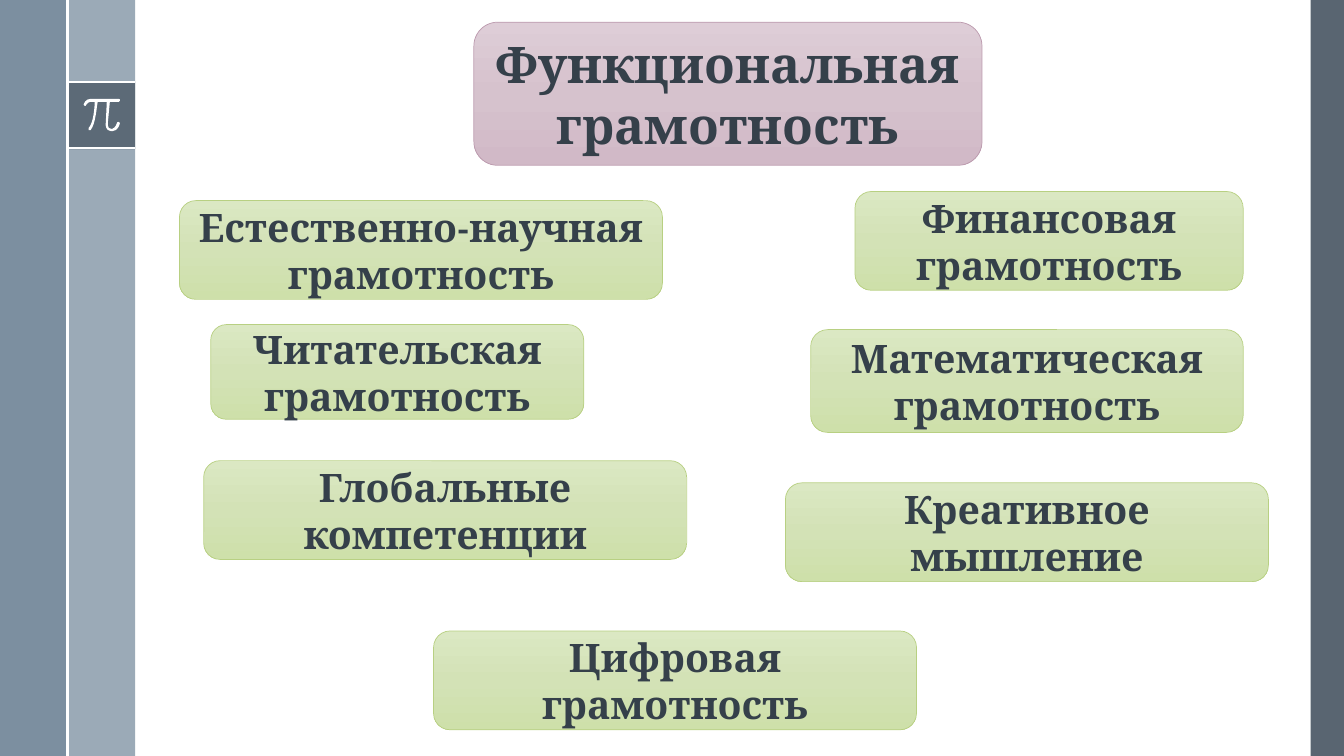
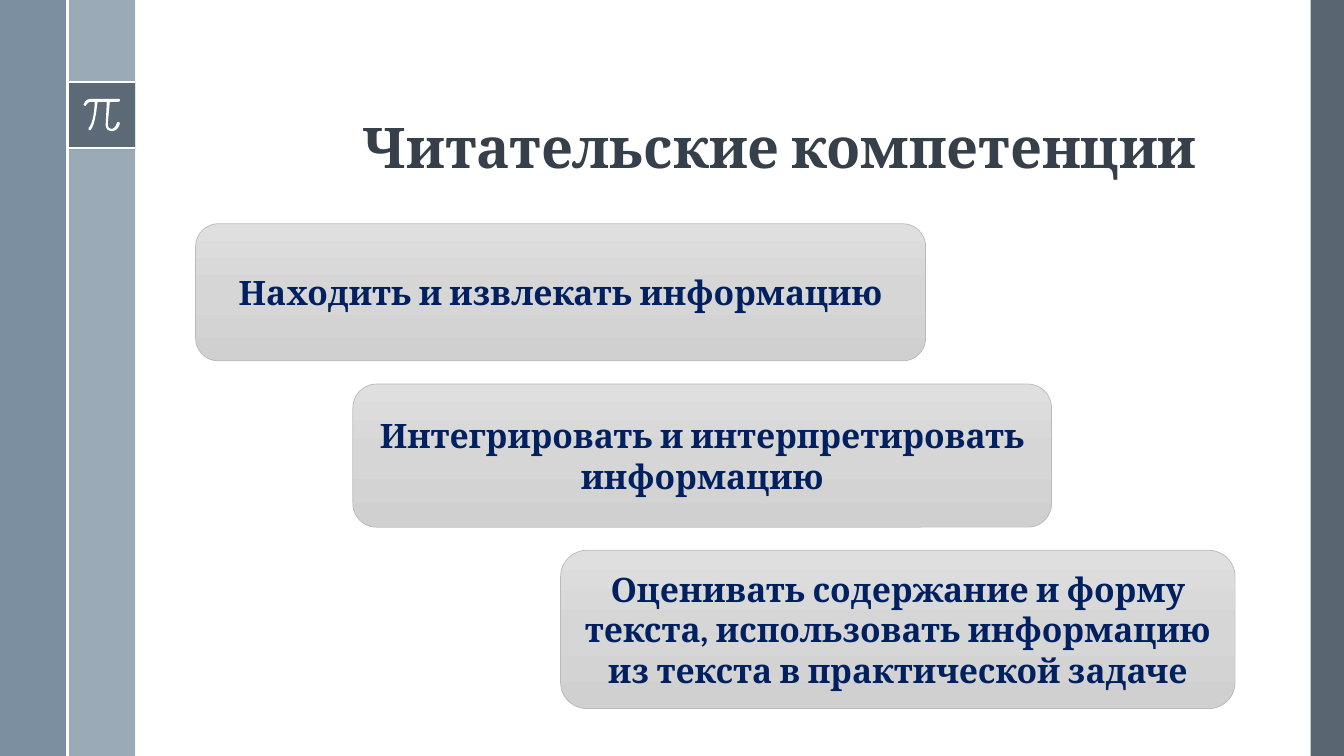
from copy import deepcopy

from lxml.etree import SubElement
from pptx import Presentation
from pptx.dml.color import RGBColor
from pptx.enum.shapes import MSO_CONNECTOR as Connector, MSO_SHAPE as Shape
from pptx.enum.text import MSO_ANCHOR as Anchor, PP_ALIGN as Align
from pptx.oxml.ns import qn
from pptx.util import Inches, Pt

WIDTH, HEIGHT = 13.33, 7.5
BAND = 0.67  # width of each left band

FONT = "Cambria"
INK, NAVY, WHITE = "35404A", "002060", "FFFFFF"
SLATE, STEEL, MIST = "475562", "6A8093", "9BAAB7"

# Card styles: three gradient colours from top to bottom, then the outline
MAUVE = (("DECDD7", "D6C2CD", "D1B9C7"), "BC9AAE")
GREEN = (("DBE8C3", "D3E2B6", "CEE0AA"), "B8D082")
GREY = (("DFDFDF", "D6D6D6", "D0D0D0"), "BABABA")

# Outline of the pi sign in inches: one point is a line, three points a curve
PI_START = (1.18, 0.98)
PI_OUTLINE = [
    [(0.9, 0.98)],
    [(0.85, 0.98), (0.83, 1.03), (0.83, 1.04)],
    [(0.83, 1.04), (0.83, 1.05), (0.84, 1.05)],
    [(0.85, 1.05)],
    [(0.85, 1.05), (0.87, 1.01), (0.9, 1.01)],
    [(0.94, 1.01)],
    [(0.94, 1.05), (0.93, 1.22), (0.88, 1.27)],
    [(0.87, 1.28), (0.87, 1.28), (0.88, 1.29)],
    [(0.9, 1.29)],
    [(0.95, 1.23), (0.96, 1.05), (0.97, 1.01)],
    [(1.06, 1.01)],
    [(1.05, 1.22)],
    [(1.05, 1.22), (1.04, 1.26), (1.07, 1.29)],
    [(1.08, 1.3), (1.09, 1.3), (1.1, 1.3)],
    [(1.12, 1.3)],
    [(1.17, 1.3), (1.19, 1.23), (1.19, 1.22)],
    [(1.19, 1.22), (1.18, 1.21), (1.18, 1.21)],
    [(1.17, 1.21), (1.16, 1.21), (1.16, 1.22)],
    [(1.16, 1.22), (1.15, 1.27), (1.11, 1.28)],
    [(1.1, 1.28), (1.09, 1.28), (1.08, 1.27)],
    [(1.07, 1.26), (1.07, 1.23), (1.07, 1.22)],
    [(1.09, 1.01)],
    [(1.18, 1.01)],
    [(1.19, 1.01), (1.19, 1), (1.19, 1)],
    [(1.19, 0.99), (1.19, 0.98), (1.18, 0.98)],
]


def colour(value):
    return RGBColor.from_string(value)


class Deck:
    def __init__(self):
        self.presentation = Presentation()
        self.presentation.slide_width = Inches(WIDTH)
        self.presentation.slide_height = Inches(HEIGHT)
        self.layout = self.presentation.slide_layouts[6]
        for placeholder in list(self.layout.placeholders):
            self.layout.shapes._spTree.remove(placeholder._element)
        self.slide = None

    def new_slide(self):
        self.slide = self.presentation.slides.add_slide(self.layout)
        if len(self.presentation.slides) == 1:
            self.frame()

    def frame(self):
        """Side bands, pi tile and white rules, moved to the layout for every slide."""
        self.band(13, 0, 0.33, HEIGHT, SLATE, 90)
        self.band(BAND, 0, BAND, HEIGHT, MIST)
        self.band(0, 0, BAND, HEIGHT, STEEL, 88)
        self.band(BAND, 0.81, BAND, BAND, SLATE, 75)
        for y in (0.81, 1.47):
            self.rule(BAND, y, 2 * BAND, y)
        self.pi_sign()
        self.rule(BAND, 0, BAND, HEIGHT)
        for shape in list(self.slide.shapes):
            self.layout.shapes._spTree.append(shape._element)

    def band(self, left, top, width, height, fill, opacity=100):
        shape = self.slide.shapes.add_shape(Shape.RECTANGLE, *map(Inches, (left, top, width, height)))
        self.plain(shape, fill)
        if opacity < 100:
            element = next(shape._element.spPr.iter(qn("a:srgbClr")))
            SubElement(element, qn("a:alpha"), val=str(opacity * 1000))

    def plain(self, shape, fill):
        shape.shadow.inherit = False
        shape.fill.solid()
        shape.fill.fore_color.rgb = colour(fill)
        shape.line.fill.background()

    def rule(self, x1, y1, x2, y2):
        line = self.slide.shapes.add_connector(Connector.STRAIGHT, *map(Inches, (x1, y1, x2, y2)))
        line.line.color.rgb = colour(WHITE)
        line.line.width = Pt(1.5)
        SubElement(line._element.spPr, qn("a:effectLst"))

    def pi_sign(self):
        builder = self.slide.shapes.build_freeform(*map(Inches, PI_START))
        builder.add_line_segments([tuple(map(Inches, segment[-1])) for segment in PI_OUTLINE])
        shape = builder.convert_to_shape()
        self.plain(shape, WHITE)
        # Bend the segments that have control points
        for element, segment in zip(list(shape._element.iter(qn("a:lnTo"))), PI_OUTLINE):
            if len(segment) == 1:
                continue
            curve = SubElement(element.getparent(), qn("a:cubicBezTo"))
            for x, y in segment:
                SubElement(curve, qn("a:pt"), x=str(Inches(x) - shape.left), y=str(Inches(y) - shape.top))
            element.getparent().replace(element, curve)

    def text(self, shape, lines, size, ink, anchor=Anchor.MIDDLE, **paragraph_format):
        frame = shape.text_frame
        frame.word_wrap = True
        frame.vertical_anchor = anchor
        frame.text = lines
        font_format = {"name": FONT, "size": Pt(size), "bold": True}
        for paragraph in frame.paragraphs:
            for name, value in paragraph_format.items():
                setattr(paragraph, name, value)
            font = paragraph.runs[0].font
            for name, value in font_format.items():
                setattr(font, name, value)
            font.color.rgb = colour(ink)

    def title(self, words):
        shape = self.slide.shapes.add_textbox(*map(Inches, (3.5, 0.48, 9.5, 1.36)))
        self.text(shape, words, 40, INK, Anchor.BOTTOM, line_spacing=0.9)

    def card(self, box, words, style, size, ink=INK):
        gradient, outline = style
        shape = self.slide.shapes.add_shape(Shape.ROUNDED_RECTANGLE, *map(Inches, box))
        shape.shadow.inherit = False
        shape.line.color.rgb = colour(outline)
        shape.line.width = Pt(0.5)
        # Vertical gradient with a third stop in the middle
        shape.fill.gradient()
        shape.fill.gradient_angle = 270
        first_stop = next(shape._element.spPr.iter(qn("a:gs")))
        first_stop.addnext(deepcopy(first_stop))
        for stop, position, value in zip(shape.fill.gradient_stops, (0, 0.5, 1), gradient):
            stop.position = position
            stop.color.rgb = colour(value)
        self.text(shape, words, size, ink, alignment=Align.CENTER)


def main():
    deck = Deck()

    # Slide 1: kinds of functional literacy
    deck.new_slide()
    deck.card((4.7, 0.22, 5.04, 1.42), "Функциональная грамотность", MAUVE, 36)
    for box, words in [
        ((2.09, 3.22, 3.7, 0.94), "Читательская грамотность"),
        ((8.04, 3.27, 4.29, 1.02), "Математическая грамотность"),
        ((8.48, 1.9, 3.85, 0.98), "Финансовая грамотность"),
        ((1.78, 1.99, 4.79, 0.98), "Естественно-научная грамотность"),
        ((4.3, 6.26, 4.79, 0.98), "Цифровая\nграмотность"),
        ((2.02, 4.57, 4.79, 0.98), "Глобальные компетенции"),
        ((7.79, 4.79, 4.79, 0.98), "Креативное мышление"),
    ]:
        deck.card(box, words, GREEN, 28)

    # Slide 2: reading skills as descending steps
    deck.new_slide()
    deck.title("Читательские компетенции")
    for box, words in [
        ((1.94, 2.22, 7.24, 1.36), "Находить и извлекать информацию"),
        ((3.5, 3.81, 6.93, 1.42), "Интегрировать и интерпретировать информацию"),
        ((5.56, 5.46, 6.69, 1.57), "Оценивать содержание и форму текста, "
                                   "использовать информацию из текста в практической задаче"),
    ]:
        deck.card(box, words, GREY, 24, NAVY)

    deck.presentation.save("out.pptx")


if __name__ == "__main__":
    main()
